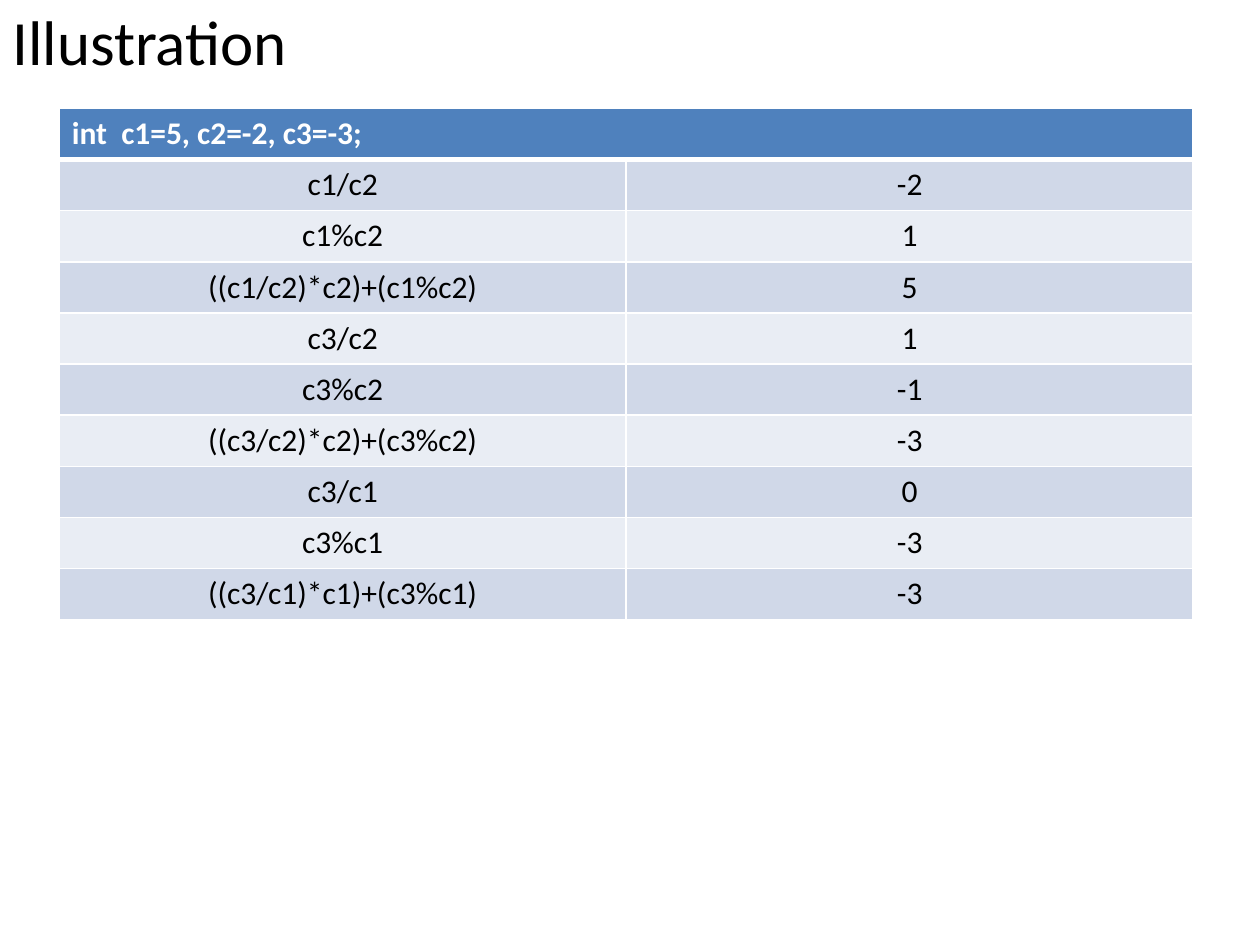
from dataclasses import dataclass

from lxml import etree
from pptx import Presentation
from pptx.dml.color import RGBColor
from pptx.enum.text import MSO_ANCHOR, PP_ALIGN
from pptx.oxml.ns import qn
from pptx.util import Inches, Pt

LEFT, CENTER = PP_ALIGN.LEFT, PP_ALIGN.CENTER
MIDDLE = MSO_ANCHOR.MIDDLE


@dataclass(frozen=True)
class Theme:
    font: str = "Calibri"
    title_size: int = 36
    table_size: int = 18
    text: str = "000000"
    header_text: str = "FFFFFF"
    header_fill: str = "4F81BD"
    bands: tuple = ("D0D8E8", "E9EDF4")
    border: str = "FFFFFF"
    border_width: int = 1
    header_rule: int = 3


theme = Theme()


def write(text_frame, text, size, color, alignment, bold=False):
    paragraph = text_frame.paragraphs[0]
    paragraph.alignment = alignment
    run = paragraph.add_run()
    run.text = text
    run.font.name = theme.font
    run.font.size = Pt(size)
    run.font.bold = bold
    run.font.color.rgb = RGBColor.from_string(color)


def style_cell(cell, fill, top, bottom):
    """Draw the four borders, then fill the cell."""
    properties = cell._tc.get_or_add_tcPr()
    widths = {"lnL": theme.border_width, "lnR": theme.border_width,
              "lnT": top, "lnB": bottom}
    for side, width in widths.items():
        line = etree.SubElement(properties, qn(f"a:{side}"), w=str(Pt(width)))
        solid = etree.SubElement(line, qn("a:solidFill"))
        etree.SubElement(solid, qn("a:srgbClr"), val=theme.border)
    cell.fill.solid()
    cell.fill.fore_color.rgb = RGBColor.from_string(fill)


presentation = Presentation()
presentation.slide_width = Inches(10)
presentation.slide_height = Inches(7.5)
slide = presentation.slides.add_slide(presentation.slide_layouts[5])

# Title
title = slide.shapes.title
title.left, title.top = Inches(0), Inches(0)
title.width, title.height = Inches(9), Inches(0.64)
title.text_frame.vertical_anchor = MIDDLE
write(title.text_frame, "Illustration", theme.title_size, theme.text, LEFT)

# Expressions and their values
declaration = "int  c1=5, c2=-2, c3=-3;"
results = [
    ("c1/c2", "-2"),
    ("c1%c2", "1"),
    ("((c1/c2)*c2)+(c1%c2)", "5"),
    ("c3/c2", "1"),
    ("c3%c2", "-1"),
    ("((c3/c2)*c2)+(c3%c2)", "-3"),
    ("c3/c1", "0"),
    ("c3%c1", "-3"),
    ("((c3/c1)*c1)+(c3%c1)", "-3"),
]
table = slide.shapes.add_table(
    len(results) + 1, 2, Inches(0.47), Inches(0.86), Inches(9), Inches(4.06)
).table

# Header row across both columns
header = table.cell(0, 0)
header.merge(table.cell(0, 1))
for cell in table.rows[0].cells:
    style_cell(cell, theme.header_fill, theme.border_width, theme.header_rule)
write(header.text_frame, declaration, theme.table_size, theme.header_text, LEFT, bold=True)

# Banded result rows
for row, values in enumerate(results, start=1):
    top = theme.header_rule if row == 1 else theme.border_width
    for column, value in enumerate(values):
        cell = table.cell(row, column)
        style_cell(cell, theme.bands[(row - 1) % 2], top, theme.border_width)
        write(cell.text_frame, value, theme.table_size, theme.text, CENTER)

presentation.save("out.pptx")
